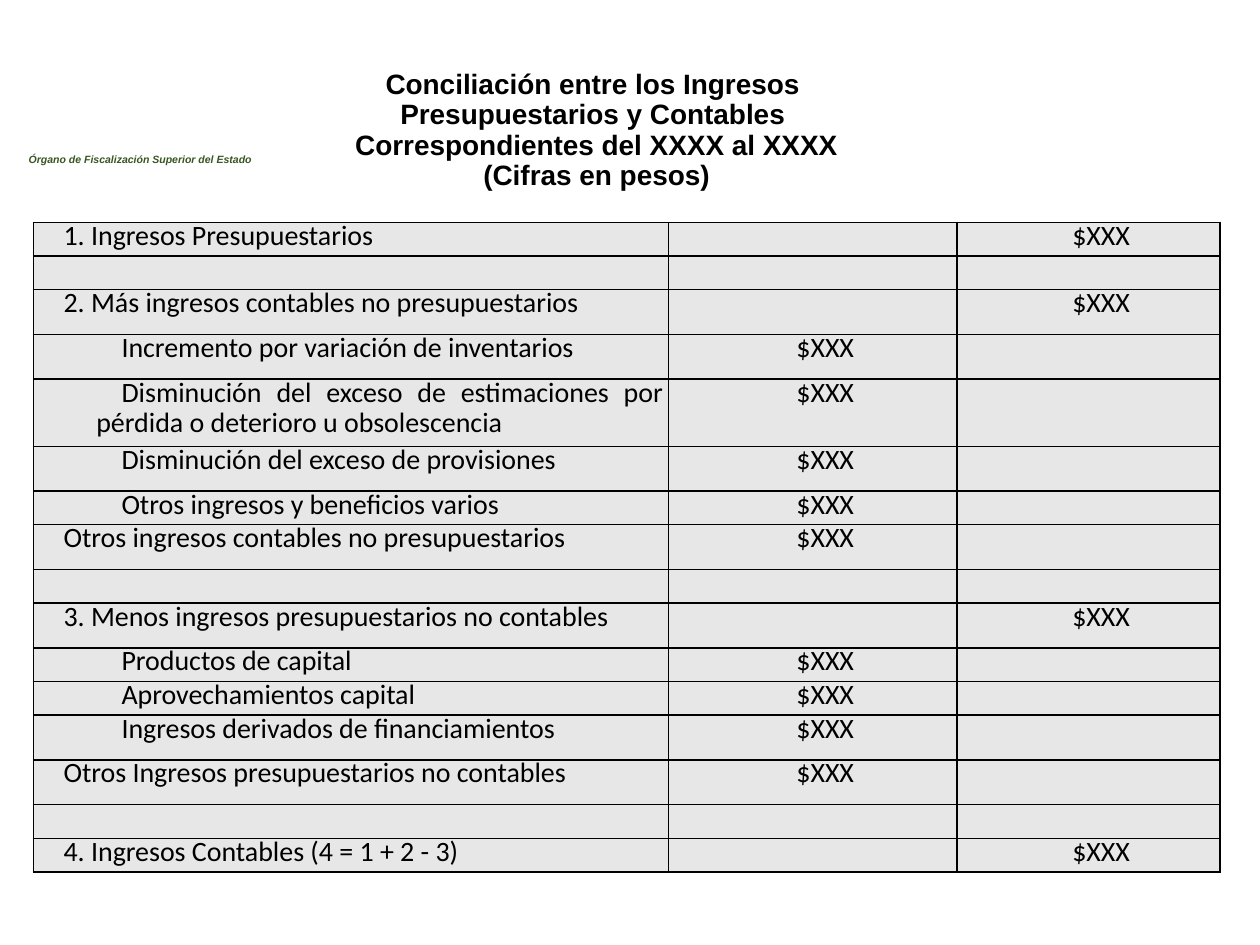
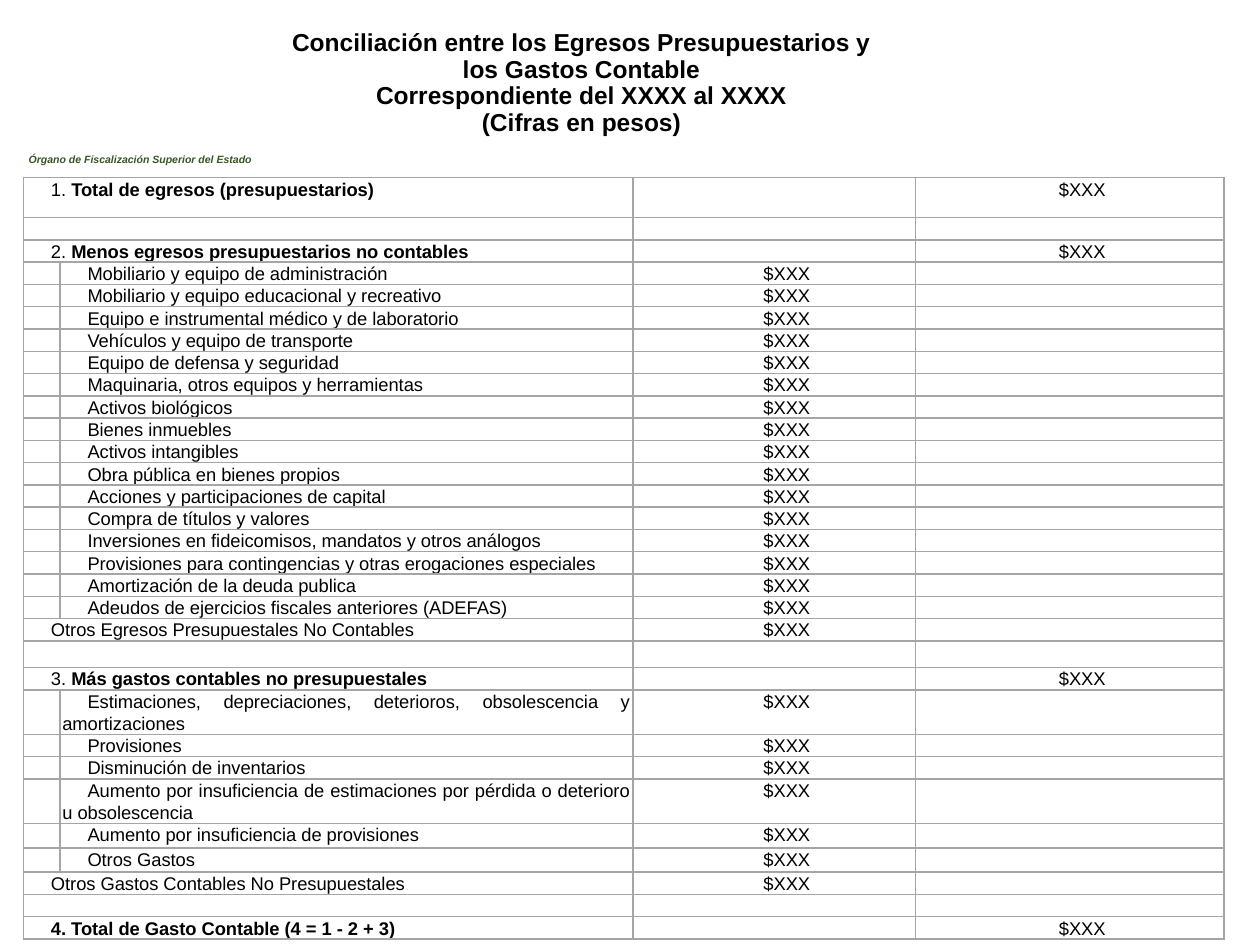
import pptx
import pptx.util
import pptx.dml.color
import pptx.enum.shapes
import pptx.enum.text
import pptx.oxml
import pptx.oxml.ns

COLORS = {"white": "FFFFFF", "black": "000000", "green": "385623",
          "gray fill": "E7E7E7", "gray line": "A5A5A5"}
ALIGN = pptx.enum.text.PP_ALIGN
ANCHOR = pptx.enum.text.MSO_ANCHOR
GRID_COLUMNS, GRID_ROWS = 100, 75
AMOUNT = "$XXX"
EMPTY_CELL_SIZE = 10


def section(label, height, plain_number=False):
    return "section", label, height, plain_number


def item(label, height):
    return "item", label, height


def other(label, height):
    return "other", label, height


def blank(height):
    return "blank", "", height


INCOME_ROWS = [
    section("1. Ingresos Presupuestarios", 3),
    blank(3),
    section("2. Más ingresos contables no presupuestarios", 4),
    item("Incremento por variación de inventarios", 4),
    item("Disminución del exceso de estimaciones por pérdida o deterioro u obsolescencia", 6),
    item("Disminución del exceso de provisiones", 4),
    item("Otros ingresos y beneficios varios", 3),
    other("Otros ingresos contables no presupuestarios", 4),
    blank(3),
    section("3. Menos ingresos presupuestarios no contables", 4),
    item("Productos de capital", 3),
    item("Aprovechamientos capital", 3),
    item("Ingresos derivados de financiamientos", 4),
    other("Otros Ingresos presupuestarios no contables", 4),
    blank(3),
    section("4. Ingresos Contables (4 = 1 + 2 - 3)", 3),
]

NON_ACCOUNTING_EXPENSES = [
    "Mobiliario y equipo de administración",
    "Mobiliario y equipo educacional y recreativo",
    "Equipo e instrumental médico y de laboratorio",
    "Vehículos y equipo de transporte",
    "Equipo de defensa y seguridad",
    "Maquinaria, otros equipos y herramientas",
    "Activos biológicos",
    "Bienes inmuebles",
    "Activos intangibles",
    "Obra pública en bienes propios",
    "Acciones y participaciones de capital",
    "Compra de títulos y valores",
    "Inversiones en fideicomisos, mandatos y otros análogos",
    "Provisiones para contingencias y otras erogaciones especiales",
    "Amortización de la deuda publica",
    "Adeudos de ejercicios fiscales anteriores (ADEFAS)",
]

EXPENSE_ROWS = [
    section("1. Total de egresos (presupuestarios)", 1.8, True),
    blank(1),
    section("2. Menos egresos presupuestarios no contables", 1, True),
    *[item(label, 1) for label in NON_ACCOUNTING_EXPENSES],
    other("Otros Egresos Presupuestales No Contables", 1),
    blank(1.2),
    section("3. Más gastos contables no presupuestales", 1, True),
    item("Estimaciones, depreciaciones, deterioros, obsolescencia y amortizaciones", 2),
    item("Provisiones", 1),
    item("Disminución de inventarios", 1),
    item("Aumento por insuficiencia de estimaciones por pérdida o deterioro u obsolescencia", 2),
    item("Aumento por insuficiencia de provisiones", 1.1),
    item("Otros Gastos", 1.1),
    other("Otros Gastos Contables No Presupuestales", 1),
    blank(1),
    section("4. Total de Gasto Contable (4 = 1 - 2 + 3)", 1),
]

INCOME_STYLE = {"font": "Calibri", "size": 16, "line": 17.5, "margin": 0.4,
                "border": "black", "fill": "gray fill", "bold sections": False,
                "divide items": False}
EXPENSE_STYLE = {"font": "Arial", "size": 10.5, "line": 12.7, "margin": 0.2,
                 "border": "gray line", "fill": None, "bold sections": True,
                 "divide items": True}


class Deck:
    """Holds the shared style and the slide being built."""

    def __init__(self):
        self.presentation = pptx.Presentation()
        self.presentation.slide_width = pptx.util.Inches(10)
        self.presentation.slide_height = pptx.util.Inches(7.5)
        self.slide = None

    def across(self, columns):
        return round(self.presentation.slide_width * columns / GRID_COLUMNS)

    def down(self, rows):
        return round(self.presentation.slide_height * rows / GRID_ROWS)

    def place(self, left, top, width, height):
        return self.across(left), self.down(top), self.across(width), self.down(height)

    def color(self, name):
        return pptx.dml.color.RGBColor.from_string(COLORS[name])

    def add_slide(self):
        self.slide = self.presentation.slides.add_slide(self.presentation.slide_layouts[6])
        self.office_label()

    def add_run(self, paragraph, text, font, size, color="black", bold=False, italic=False):
        run = paragraph.add_run()
        run.text = text
        run.font.name = font
        run.font.size = pptx.util.Pt(size)
        run.font.bold = bold
        run.font.italic = italic
        run.font.color.rgb = self.color(color)

    def office_label(self):
        shape = self.slide.shapes.add_shape(
            pptx.enum.shapes.MSO_SHAPE.RECTANGLE, *self.place(1.3, 11.65, 20.3, 2))
        shape.shadow.inherit = False
        shape.fill.solid()
        shape.fill.fore_color.rgb = self.color("white")
        shape.line.fill.background()
        frame = shape.text_frame
        frame.word_wrap = True
        frame.vertical_anchor = ANCHOR.MIDDLE
        frame.paragraphs[0].alignment = ALIGN.LEFT
        self.add_run(frame.paragraphs[0], "Órgano de Fiscalización Superior del Estado",
                     "Arial", 6, "green", bold=True, italic=True)

    def title(self, lines, size, *box):
        frame = self.slide.shapes.add_textbox(*self.place(*box)).text_frame
        frame.word_wrap = True
        paragraph = frame.paragraphs[0]
        paragraph.alignment = ALIGN.CENTER
        paragraph.line_spacing = 0.9
        for index, line in enumerate(lines):
            if index:
                paragraph.add_line_break()
            self.add_run(paragraph, line, "Arial", size, bold=True)

    def border(self, cell, color, hidden_side=None):
        properties = cell._tc.get_or_add_tcPr()
        for side in ("L", "R", "T", "B"):
            line = pptx.oxml.parse_xml(
                f'<a:ln{side} {pptx.oxml.ns.nsdecls("a")} w="12700">'
                + ("<a:noFill/>" if side == hidden_side else
                   f'<a:solidFill><a:srgbClr val="{COLORS[color]}"/></a:solidFill>')
                + f"</a:ln{side}>")
            properties.append(line)

    def format_cell(self, cell, style, alignment, hidden_side=None):
        """Gives the cell its border, fill, margins and paragraph layout."""
        self.border(cell, style["border"], hidden_side)
        if style["fill"]:
            cell.fill.solid()
            cell.fill.fore_color.rgb = self.color(style["fill"])
        else:
            cell.fill.background()
        cell.margin_left = cell.margin_right = self.across(style["margin"])
        cell.margin_top = cell.margin_bottom = 0
        paragraph = cell.text_frame.paragraphs[0]
        paragraph.alignment = alignment
        paragraph.line_spacing = pptx.util.Pt(style["line"])
        paragraph.space_after = pptx.util.Pt(5)
        properties = paragraph._p.get_or_add_pPr()
        properties.set("marL", "0")
        properties.set("indent", str(self.across(2)))
        paragraph._p.append(pptx.oxml.parse_xml(
            f'<a:endParaRPr {pptx.oxml.ns.nsdecls("a")} sz="{EMPTY_CELL_SIZE * 100}"/>'))

    def reconciliation_table(self, rows, style, column_widths, left, top, height):
        shape = self.slide.shapes.add_table(
            len(rows), len(column_widths),
            *self.place(left, top, sum(column_widths), height))
        table = shape.table
        table.first_row = table.horz_banding = False
        for column, width in zip(table.columns, column_widths):
            column.width = self.across(width)
        unit = height / sum(row[2] for row in rows)
        for index, (kind, label, units, *options) in enumerate(rows):
            table.rows[index].height = self.down(units * unit)
            cells = [table.cell(index, column) for column in range(len(column_widths))]
            undivided = kind == "item" and not style["divide items"]
            hidden_sides = ("R", "L", None, None) if undivided else (None,) * 4
            alignments = (ALIGN.JUSTIFY, ALIGN.JUSTIFY, ALIGN.CENTER, ALIGN.CENTER)
            for cell, alignment, hidden_side in zip(cells, alignments, hidden_sides):
                self.format_cell(cell, style, alignment, hidden_side)
            if kind != "item":
                cells[0].merge(cells[1])
            if kind == "blank":
                continue
            label_cell = cells[1] if kind == "item" else cells[0]
            amount_cell = cells[3] if kind == "section" else cells[2]
            bold = kind == "section" and style["bold sections"]
            paragraph = label_cell.text_frame.paragraphs[0]
            if any(options):
                number, label = label.split(" ", 1)
                self.add_run(paragraph, number + " ", style["font"], style["size"])
            self.add_run(paragraph, label, style["font"], style["size"], bold=bold)
            self.add_run(amount_cell.text_frame.paragraphs[0], AMOUNT,
                         style["font"], style["size"])


def main():
    deck = Deck()

    deck.add_slide()
    deck.title(["Conciliación entre los Ingresos ", "Presupuestarios y Contables ",
                "Correspondientes del XXXX al XXXX", "(Cifras en pesos)"],
               16, 17.95, 5.1, 58.8, 12.5)
    deck.reconciliation_table(INCOME_ROWS, INCOME_STYLE, (4.6, 45.8, 22.9, 20.9),
                              2.65, 17.65, 51.6)

    deck.add_slide()
    deck.title(["Conciliación entre los Egresos Presupuestarios y", " los Gastos Contable ",
                "Correspondiente del XXXX al XXXX", "(Cifras en pesos)"],
               14, 13.2, 1.95, 65.9, 9.8)
    deck.reconciliation_table(EXPENSE_ROWS, EXPENSE_STYLE, (2.9, 45.5, 22.4, 24.5),
                              1.85, 14.1, 60.4)

    deck.presentation.save("out.pptx")


if __name__ == "__main__":
    main()
